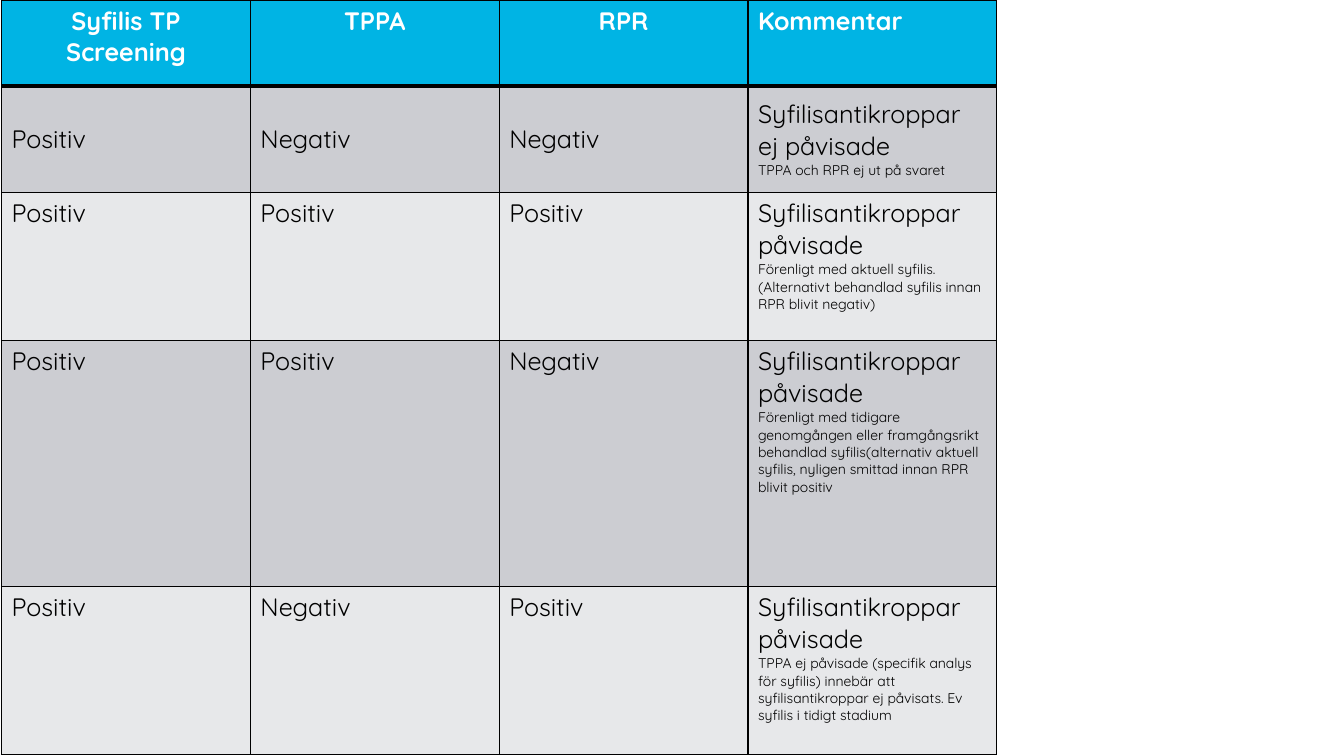
import lxml.etree
import pptx
import pptx.dml.color
import pptx.enum.text
import pptx.oxml.ns
import pptx.util

Cm = pptx.util.Cm
ALIGN = pptx.enum.text.PP_ALIGN
ANCHOR = pptx.enum.text.MSO_ANCHOR

FONT = "Quicksand"
BLACK, WHITE = "000000", "FFFFFF"
HEADER_FILL = "00B4E4"
BAND_FILLS = ["E7E8EA", "CCCDD2"]
ROW_HEIGHTS = [2.16, 2.69, 3.73, 6.2, 4.24]
HEADINGS = ["Syfilis TP Screening", "TPPA", "RPR", "Kommentar"]
FOUND = "Syfilisantikroppar påvisade"
RESULTS = [
    ["Positiv", "Negativ", "Negativ",
     "Syfilisantikroppar ej påvisade\nTPPA och RPR ej ut på svaret"],
    ["Positiv", "Positiv", "Positiv",
     FOUND + "\nFörenligt med aktuell syfilis.\n"
     "(Alternativt behandlad syfilis innan RPR blivit negativ)"],
    ["Positiv", "Positiv", "Negativ",
     FOUND + "\nFörenligt med tidigare genomgången eller framgångsrikt behandlad "
     "syfilis(alternativ aktuell syfilis, nyligen smittad innan RPR blivit positiv"],
    ["Positiv", "Negativ", "Positiv",
     FOUND + "\nTPPA ej påvisade (specifik analys för syfilis) innebär att "
     "syfilisantikroppar ej påvisats. Ev syfilis i tidigt stadium"],
]


def rgb(color):
    """Return the colour for a hex string."""
    return pptx.dml.color.RGBColor.from_string(color)


def set_borders(cell, top, bottom):
    """Draw black cell borders, with top and bottom widths in points."""
    qn = pptx.oxml.ns.qn
    tc_pr = cell._tc.get_or_add_tcPr()
    for side, width in (("L", 1), ("R", 1), ("T", top), ("B", bottom)):
        ln = lxml.etree.SubElement(tc_pr, qn("a:ln" + side), w=str(pptx.util.Pt(width)))
        fill = lxml.etree.SubElement(ln, qn("a:solidFill"))
        lxml.etree.SubElement(fill, qn("a:srgbClr"), val=BLACK)


def fill_cell(cell, text, row, column):
    """Write and style one cell according to its row and column."""
    header = row == 0
    set_borders(cell, top=3 if row == 1 else 1, bottom=3 if header else 1)
    cell.fill.solid()
    cell.fill.fore_color.rgb = rgb(HEADER_FILL if header else BAND_FILLS[row % 2])
    cell.vertical_anchor = ANCHOR.MIDDLE if row == 1 else ANCHOR.TOP
    cell.text_frame.text = text
    for i, p in enumerate(cell.text_frame.paragraphs):
        p.alignment = ALIGN.CENTER if header and column < 3 else ALIGN.LEFT
        for r in p.runs:
            r.font.name = FONT
            r.font.size = pptx.util.Pt(18 if i == 0 else 10)
            r.font.bold = header
            r.font.color.rgb = rgb(WHITE if header else BLACK)


def add_result_table(s, left, top, width, height):
    """Add the table of syphilis test results in the given box."""
    rows = [HEADINGS] + RESULTS
    columns = len(HEADINGS)
    table = s.shapes.add_table(len(rows), columns, left, top, width, height).table
    for column in table.columns:
        column.width = width // columns
    for i, texts in enumerate(rows):
        table.rows[i].height = int(height * ROW_HEIGHTS[i] / sum(ROW_HEIGHTS))
        for j, text in enumerate(texts):
            fill_cell(table.cell(i, j), text, i, j)


def main():
    """Build and save the slide."""
    prs = pptx.Presentation()
    prs.slide_width, prs.slide_height = Cm(33.87), Cm(19.05)
    s = prs.slides.add_slide(prs.slide_layouts[6])
    add_result_table(s, Cm(0.04), Cm(0), Cm(25.08), Cm(19.02))
    prs.save("out.pptx")


if __name__ == "__main__":
    main()
